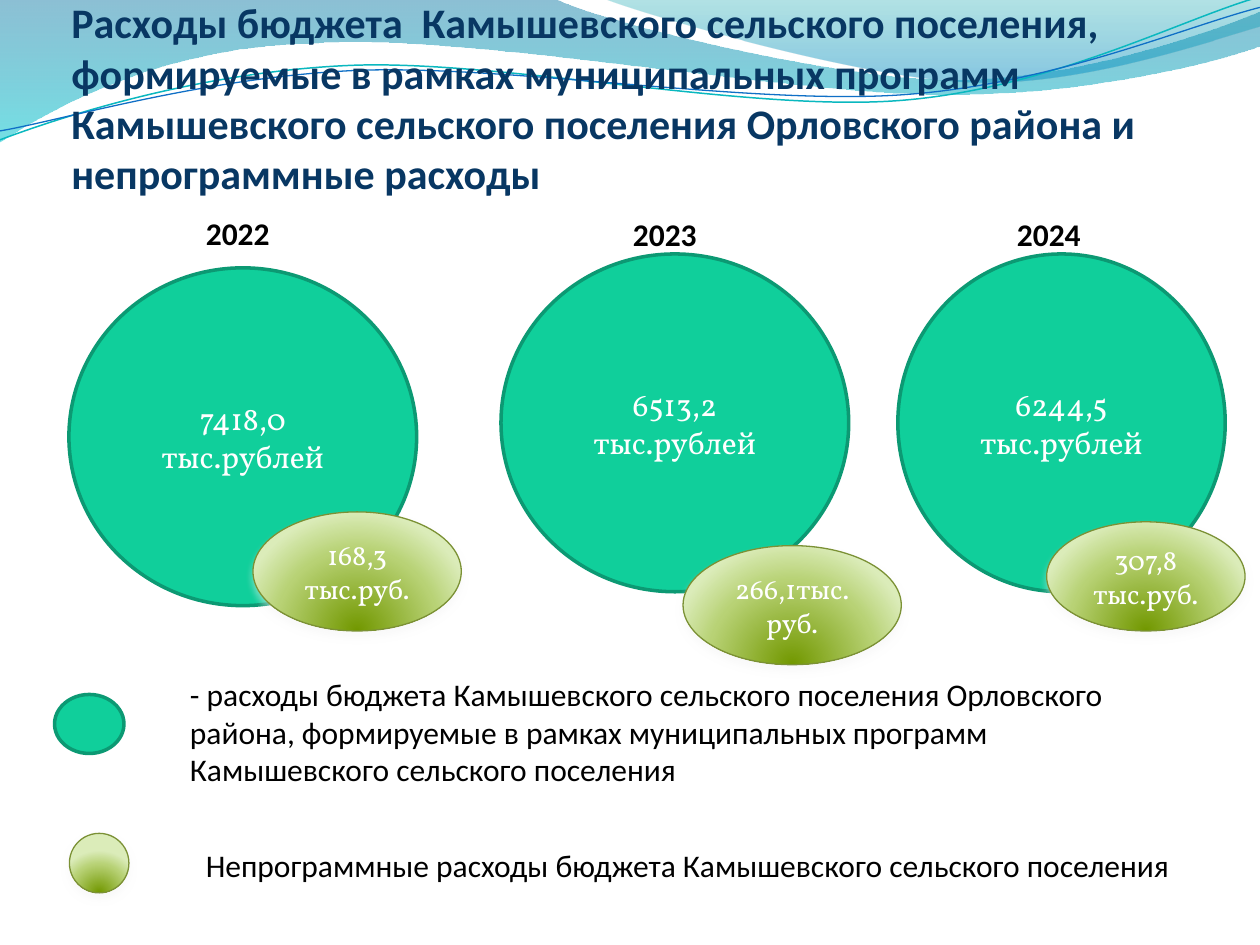
"""Build the slide on programme and non-programme budget spending for 2022-2024."""
from lxml.etree import Element, SubElement
from pptx import Presentation
from pptx.dml.color import RGBColor
from pptx.enum.shapes import MSO_SHAPE
from pptx.enum.text import MSO_ANCHOR, PP_ALIGN
from pptx.oxml import parse_xml
from pptx.oxml.ns import nsdecls, qn
from pptx.util import Cm, Pt

TITLE = ("Расходы бюджета  Камышевского сельского поселения, формируемые в рамках "
         "муниципальных программ Камышевского сельского поселения Орловского района "
         "и непрограммные расходы")

LABELS = [
    ("2022", (3.9, 4.19, 2.01, 1.02), True),
    ("2023", (12.51, 4.22, 2.01, 1.02), True),
    ("2024", (20.25, 4.22, 2.01, 1.02), True),
    ("Непрограммные расходы бюджета Камышевского сельского поселения",
     (3.9, 16.93, 21.62, 1.02), False),
    ("- расходы бюджета Камышевского сельского поселения Орловского района, формируемые "
     "в рамках муниципальных программ Камышевского сельского поселения",
     (3.58, 13.48, 20.5, 3.33), False),
]

PROGRAMME = [
    ("7418,0 тыс.рублей", (1.39, 5.4, 7.01, 6.81)),
    ("6513,2 тыс.рублей", (10.1, 5.12, 7.01, 6.81)),
    ("6244,5 тыс.рублей", (18.1, 5.12, 6.6, 6.81)),
    ("", (1.1, 14, 1.4, 1.19)),
]
OTHER = [
    ("168,3 тыс.руб.", (5.1, 10.32, 4.2, 2.4)),
    ("266,1тыс.\nруб.", (13.77, 11, 4.4, 2.4)),
    ("307,8\nтыс.руб.", (21.1, 10.52, 4, 2.2)),
    ("", (1.4, 16.8, 1.2, 1.2)),
]

DOWNWARD = '<a:lin ang="5400000" scaled="0"/>'
FROM_BELOW = ('<a:path path="circle"><a:fillToRect l="50000" t="130000" r="50000" '
              'b="-30000"/></a:path>')
GREEN_STOPS = [(0, "729800", 100), (68, "B8D275", 100), (100, "DBECB9", 100)]

BANDS = [
    ([(0, 0), (11.18, -0.03), (12.09, 0.43, 16.87, 1.6, 19.25, 1.6),
      (21.67, 1.6, 24.33, 0.66, 25.4, 0.23), (25.43, 0.91),
      (24.97, 1.12, 22.1, 1.93, 18.95, 1.9), (15.8, 1.9, 9.7, 0.71, 6.53, 0.86),
      (3.28, 0.91, 1.17, 2.11, -0.03, 2.87)],
     [(0, "0074A1", 45), (100, "00C6CF", 55)]),
    ([(12.17, -0.03), (12.93, 0.28, 17.32, 1.57, 19.53, 1.65),
      (21.74, 1.75, 24.41, 0.81, 25.4, 0.53), (25.4, 0)],
     [(0, "00A1A9", 30), (80, "008BBF", 45)]),
]
WAVES = [
    ([(0, 2.82), (1.22, 2.36, 4.01, 1.45, 7.04, 1.32),
      (10.03, 1.19, 15.06, 2.26, 18.11, 2.03), (21.16, 1.8, 23.83, 0.38, 25.35, -0.05)],
     "0AB8BF", 0.85),
    ([(0, 2.64), (1.19, 2.44, 4.17, 1.55, 7.19, 1.42),
      (10.24, 1.3, 15.16, 2.13, 18.21, 1.91), (21.23, 1.7, 23.9, 0.53, 25.4, 0.15)],
     "0F6FC6", 0.75),
]


def color(value):
    return RGBColor.from_string(value)


def lengths(values):
    return [Cm(value) for value in values]


def write(shape, text, size=18, font="Calibri", ink="000000", bold=False,
          align=PP_ALIGN.LEFT, anchor=MSO_ANCHOR.TOP):
    frame = shape.text_frame
    frame.word_wrap = True
    frame.vertical_anchor = anchor
    frame.text = text
    for para in frame.paragraphs:
        para.alignment = align
        for span in para.runs:
            span.font.size, span.font.name, span.font.bold = Pt(size), font, bold
            span.font.color.rgb = color(ink)
    return frame


def outline(shape, ink, width):
    shape.line.color.rgb = color(ink)
    shape.line.width = Pt(width)


def gradient(shape, stops, direction):
    shape.fill.gradient()
    properties = shape.element.spPr
    marks = "".join(
        f'<a:gs pos="{position * 1000}"><a:srgbClr val="{ink}">'
        f'<a:alpha val="{opacity * 1000}"/></a:srgbClr></a:gs>'
        for position, ink, opacity in stops)
    properties.replace(properties.find(qn("a:gradFill")), parse_xml(
        f'<a:gradFill {nsdecls("a")} rotWithShape="1"><a:gsLst>{marks}</a:gsLst>'
        f'{direction}</a:gradFill>'))


def soft_shadow(shape):
    effects = shape.element.spPr.find(qn("a:effectLst"))
    shadow = SubElement(effects, qn("a:outerShdw"), blurRad=str(Pt(4.5)),
                        dist=str(Pt(3)), dir="5400000", rotWithShape="0")
    ink = SubElement(shadow, qn("a:srgbClr"), val="F4F4F4")
    SubElement(ink, qn("a:alpha"), val="48000")


def add_curve(page, segments, close):
    start, *rest = [lengths(segment) for segment in segments]
    points = [segment[i:i + 2] for segment in rest for i in range(0, len(segment), 2)]
    builder = page.shapes.build_freeform(*start)
    builder.add_line_segments(points, close=close)
    shape = builder.convert_to_shape()
    shape.shadow.inherit = False
    steps = iter(list(shape.element.spPr.iter(qn("a:lnTo"))))
    for segment in rest:
        group = [next(steps) for _ in range(len(segment) // 2)]
        if len(group) == 3:
            curve = Element(qn("a:cubicBezTo"))
            group[0].addprevious(curve)
            for step in group:
                curve.append(step[0])
                step.getparent().remove(step)
    return shape


def add_ellipse(page, text, position, size):
    shape = page.shapes.add_shape(MSO_SHAPE.OVAL, *lengths(position))
    shape.shadow.inherit = False
    if text:
        write(shape, text, size=size, font="Vollkorn", ink="FFFFFF",
              align=PP_ALIGN.CENTER, anchor=MSO_ANCHOR.MIDDLE)
    return shape


def main():
    deck = Presentation()
    deck.slide_width, deck.slide_height = Cm(25.4), Cm(19.05)
    page = deck.slides.add_slide(deck.slide_layouts[6])

    for segments, stops in BANDS:
        band = add_curve(page, segments, close=True)
        gradient(band, stops, DOWNWARD)
        band.line.fill.background()
    for segments, ink, width in WAVES:
        wave = add_curve(page, segments, close=False)
        wave.fill.background()
        outline(wave, ink, width)

    title = page.shapes.add_textbox(*lengths((1.44, 0.82, 23.06, 3.18)))
    frame = write(title, TITLE, size=24, ink="083763", bold=True, anchor=MSO_ANCHOR.BOTTOM)
    frame.margin_left = frame.margin_right = frame.margin_bottom = 0

    for text, position in PROGRAMME:
        circle = add_ellipse(page, text, position, size=18)
        circle.fill.solid()
        circle.fill.fore_color.rgb = color("10CF9B")
        outline(circle, "0C9973", 2)
    for text, position in OTHER:
        oval = add_ellipse(page, text, position, size=16)
        gradient(oval, GREEN_STOPS, FROM_BELOW)
        outline(oval, "7B9135", 0.75)
        soft_shadow(oval)
    for text, position, bold in LABELS:
        write(page.shapes.add_textbox(*lengths(position)), text, bold=bold)

    deck.save("out.pptx")


if __name__ == "__main__":
    main()
